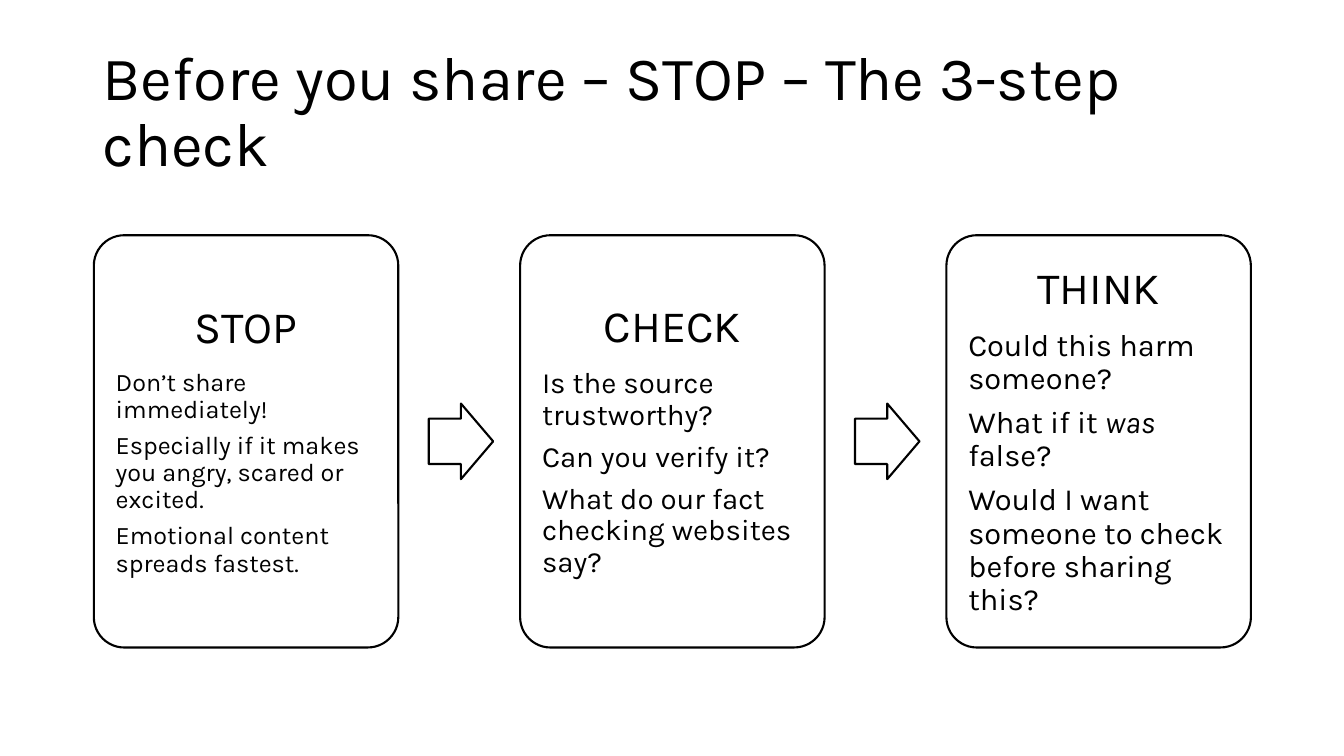
from pptx import Presentation
from pptx.dml.color import RGBColor
from pptx.enum.shapes import MSO_SHAPE
from pptx.enum.text import MSO_ANCHOR, MSO_AUTO_SIZE, PP_ALIGN
from pptx.util import Pt

TITLE = "Before you share – STOP – The 3-step check"
# heading, body size, body paragraphs as lists of (text, italic) runs
STEPS = [
    ("STOP", 18, [
        [("Don’t share immediately!", False)],
        [("Especially if it makes you angry, scared or excited.", False)],
        [("Emotional content spreads fastest.", False)],
    ]),
    ("CHECK", 21, [
        [("Is the source trustworthy?", False)],
        [("Can you verify it?", False)],
        [("What do our fact checking websites say?", False)],
    ]),
    ("THINK", 22, [
        [("Could this harm someone?", False)],
        [("What if it ", False), ("was ", True), ("false?", False)],
        [("Would I want someone to check before sharing this?", False)],
    ]),
]
COLOURS = {"ink": "000000", "paper": "FFFFFF"}
FONT = "Karla"

CARD_LEFT, CARD_TOP, CARD_WIDTH, CARD_HEIGHT = 67, 168, 217.5, 294.5
CARD_PITCH = CARD_WIDTH * 1.4
CARD_INSET = 9.3
ARROW_OFFSET = CARD_WIDTH * 1.1
ARROW_WIDTH, ARROW_HEIGHT = 46, 54
ARROW_TOP = CARD_TOP + (CARD_HEIGHT - ARROW_HEIGHT) / 2


def write(paragraph, runs, size, align=PP_ALIGN.LEFT, space_after=0):
    paragraph.alignment = align
    paragraph.line_spacing = 0.9
    paragraph.space_before = Pt(0)
    paragraph.space_after = Pt(space_after)
    for text, italic in runs:
        run = paragraph.add_run()
        run.text = text
        run.font.name = FONT
        run.font.size = Pt(size)
        run.font.italic = italic
        run.font.color.rgb = RGBColor.from_string(COLOURS["ink"])


def place(shape, left, top, width, height):
    shape.left, shape.top = Pt(left), Pt(top)
    shape.width, shape.height = Pt(width), Pt(height)


def add_outlined(slide, kind, box, adjustments):
    shape = slide.shapes.add_shape(kind, *map(Pt, box))
    for index, value in enumerate(adjustments):
        shape.adjustments[index] = value
    shape.shadow.inherit = False
    shape.fill.solid()
    shape.fill.fore_color.rgb = RGBColor.from_string(COLOURS["paper"])
    shape.line.color.rgb = RGBColor.from_string(COLOURS["ink"])
    shape.line.width = Pt(1.5)
    return shape


def add_card(slide, left, heading, body_size, body):
    box = (left, CARD_TOP, CARD_WIDTH, CARD_HEIGHT)
    card = add_outlined(slide, MSO_SHAPE.ROUNDED_RECTANGLE, box, [0.1])
    frame = card.text_frame
    frame.word_wrap = True
    frame.vertical_anchor = MSO_ANCHOR.MIDDLE
    frame.margin_left = frame.margin_right = Pt(CARD_INSET)
    frame.margin_top = frame.margin_bottom = Pt(CARD_INSET)
    write(frame.paragraphs[0], [(heading, False)], size=32,
          align=PP_ALIGN.CENTER, space_after=0.35 * 32)
    for runs in body:
        write(frame.add_paragraph(), runs, size=body_size,
              space_after=0.35 * body_size)


def main():
    presentation = Presentation()
    presentation.slide_width, presentation.slide_height = Pt(960), Pt(540)
    slide = presentation.slides.add_slide(presentation.slide_layouts[5])

    title = slide.shapes.title
    place(title, 66, 28.75, 828, 104.4)
    title.text_frame.word_wrap = True
    title.text_frame.auto_size = MSO_AUTO_SIZE.NONE
    title.text_frame.vertical_anchor = MSO_ANCHOR.MIDDLE
    write(title.text_frame.paragraphs[0], [(TITLE, False)], size=44)

    for index, (heading, body_size, body) in enumerate(STEPS):
        left = CARD_LEFT + index * CARD_PITCH
        add_card(slide, left, heading, body_size, body)
        if index < len(STEPS) - 1:
            box = (left + ARROW_OFFSET, ARROW_TOP, ARROW_WIDTH, ARROW_HEIGHT)
            add_outlined(slide, MSO_SHAPE.RIGHT_ARROW, box, [0.6, 0.5])

    presentation.save("out.pptx")


if __name__ == "__main__":
    main()
